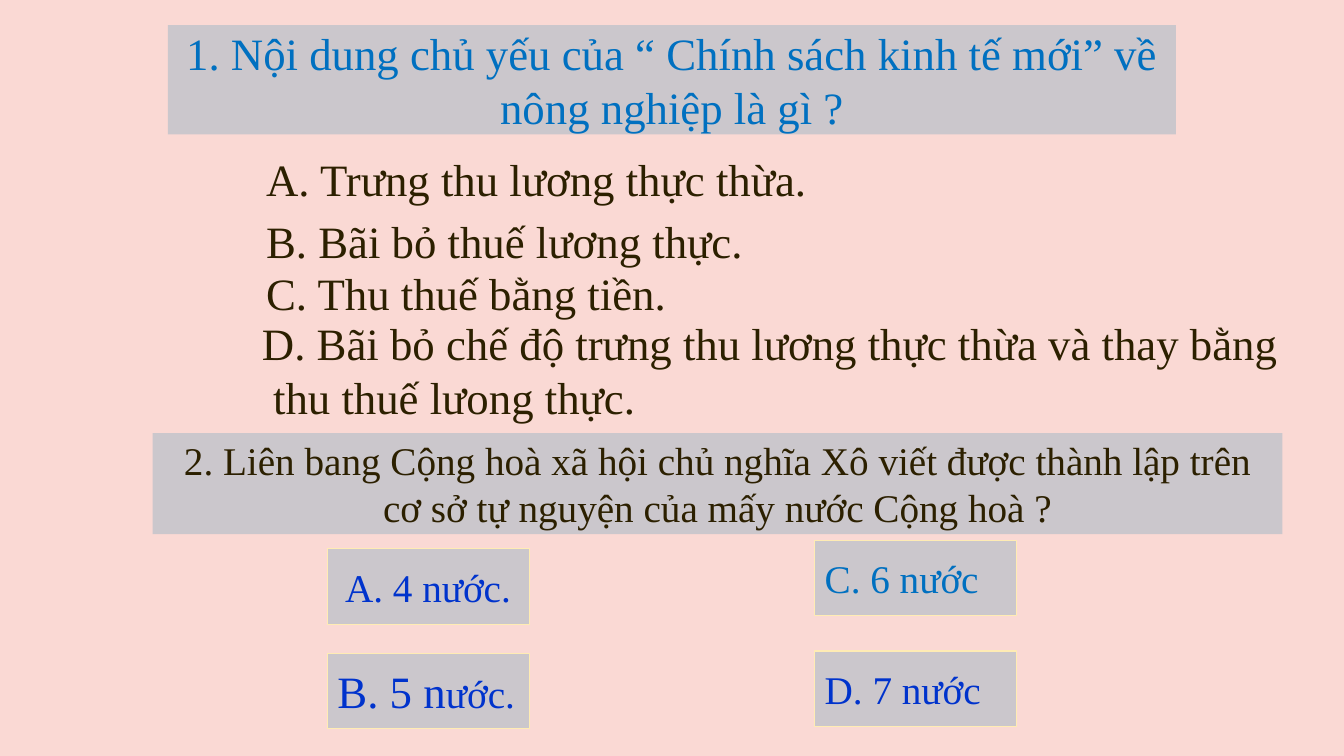
"""Build a quiz slide with two multiple-choice history questions."""
from dataclasses import dataclass

from pptx import Presentation
from pptx import util as u
from pptx.dml.color import RGBColor
from pptx.enum import shapes, text


@dataclass(frozen=True)
class Theme:
    """Hold the colours, font and type sizes."""
    font: str = "Times New Roman"
    back: str = "FAD9D4"
    panel: str = "CBC7CC"
    edge: str = "FFECB4"
    ink: str = "2C2000"
    sky: str = "0070C0"
    blue: str = "0033CC"
    large: int = 32
    medium: int = 28


class QuizSlide:
    """Draw the elements of a quiz on one slide."""

    def __init__(self, prs, theme):
        """Add a title-only slide with a plain background."""
        self.theme = theme
        self.s = prs.slides.add_slide(prs.slide_layouts[5])
        self.fill(self.s.background.fill, theme.back)

    def fill(self, target, color):
        """Make a fill solid in one colour."""
        target.solid()
        target.fore_color.rgb = RGBColor.from_string(color)

    def label(self, sp, runs, color, align=text.PP_ALIGN.LEFT, **frame):
        """Put runs of (text, size) into a shape."""
        tf = sp.text_frame
        frame = {"word_wrap": True, "auto_size": text.MSO_AUTO_SIZE.NONE,
                 "vertical_anchor": text.MSO_ANCHOR.MIDDLE, **frame}
        for name, value in frame.items():
            setattr(tf, name, value)
        p = tf.paragraphs[0]
        p.alignment = align
        for words, size in runs:
            r = p.add_run()
            r.text = words
            for name, value in {"name": self.theme.font, "size": u.Pt(size)}.items():
                setattr(r.font, name, value)
            r.font.color.rgb = RGBColor.from_string(color)
        return p

    def panel(self, box):
        """Add a plain filled rectangle."""
        sp = self.s.shapes.add_shape(shapes.MSO_SHAPE.RECTANGLE, *map(u.Pt, box))
        sp.shadow.inherit = False
        self.fill(sp.fill, self.theme.panel)
        sp.line.fill.background()
        return sp

    def title(self, box, words):
        """Place the first question in the title placeholder."""
        sp = self.s.shapes.title
        for name, value in zip(("left", "top", "width", "height"), box):
            setattr(sp, name, u.Pt(value))
        self.fill(sp.fill, self.theme.panel)
        self.label(sp, [(words, self.theme.large)], self.theme.sky, text.PP_ALIGN.CENTER)

    def question(self, box, words):
        """Add a question on a panel."""
        self.label(self.panel(box), [(words, self.theme.medium)], self.theme.ink,
                   text.PP_ALIGN.CENTER)

    def option(self, box, words, hang=0):
        """Add an answer as bare text, with an optional hanging indent."""
        sp = self.s.shapes.add_textbox(*map(u.Pt, box))
        p = self.label(sp, [(words, self.theme.large)], self.theme.ink,
                       vertical_anchor=text.MSO_ANCHOR.TOP)
        if hang:
            pPr = p._p.get_or_add_pPr()
            pPr.set("marL", str(u.Pt(hang)))
            pPr.set("indent", str(-u.Pt(hang)))

    def button(self, left, top, runs, color):
        """Add an answer on an outlined panel."""
        sp = self.panel((left, top, 144, 54))
        self.fill(sp.line.fill, self.theme.edge)
        sp.line.width = u.Pt(0.75)
        self.label(sp, runs, color, word_wrap=False)


def main():
    """Compose and save the slide."""
    prs = Presentation()
    prs.slide_width, prs.slide_height = u.Pt(960), u.Pt(540)
    t = Theme()
    quiz = QuizSlide(prs, t)
    quiz.title((120, 18, 720, 78),
               "1. Nội dung chủ yếu của “ Chính sách kinh tế mới” về nông nghiệp là gì ?")
    for top, words in ((105, "A. Trưng thu lương thực thừa."),
                       (149, "B. Bãi bỏ thuế lương thực."),
                       (186, "C. Thu thuế bằng tiền.")):
        quiz.option((183, top, 404, 46), words)
    quiz.option((180, 222, 747, 85),
                "D. Bãi bỏ chế độ trưng thu lương thực thừa và thay bằng thu thuế lưong thực.",
                hang=8)
    quiz.question((109, 309.5, 807, 72),
                  "2. Liên bang Cộng hoà xã hội chủ nghĩa Xô viết được thành lập trên "
                  "cơ sở tự nguyện của mấy nước Cộng hoà ?")
    for left, top, runs, color in (
            (234, 392, [(" A. 4 nước.", t.medium)], t.blue),
            (234, 466.5, [("B. 5 n", t.large), ("ước.", t.medium)], t.blue),
            (582, 386, [("C. 6 nước", t.medium)], t.sky),
            (582, 465, [("D. 7 nước", t.medium)], t.blue)):
        quiz.button(left, top, runs, color)
    prs.save("out.pptx")


if __name__ == "__main__":
    main()
